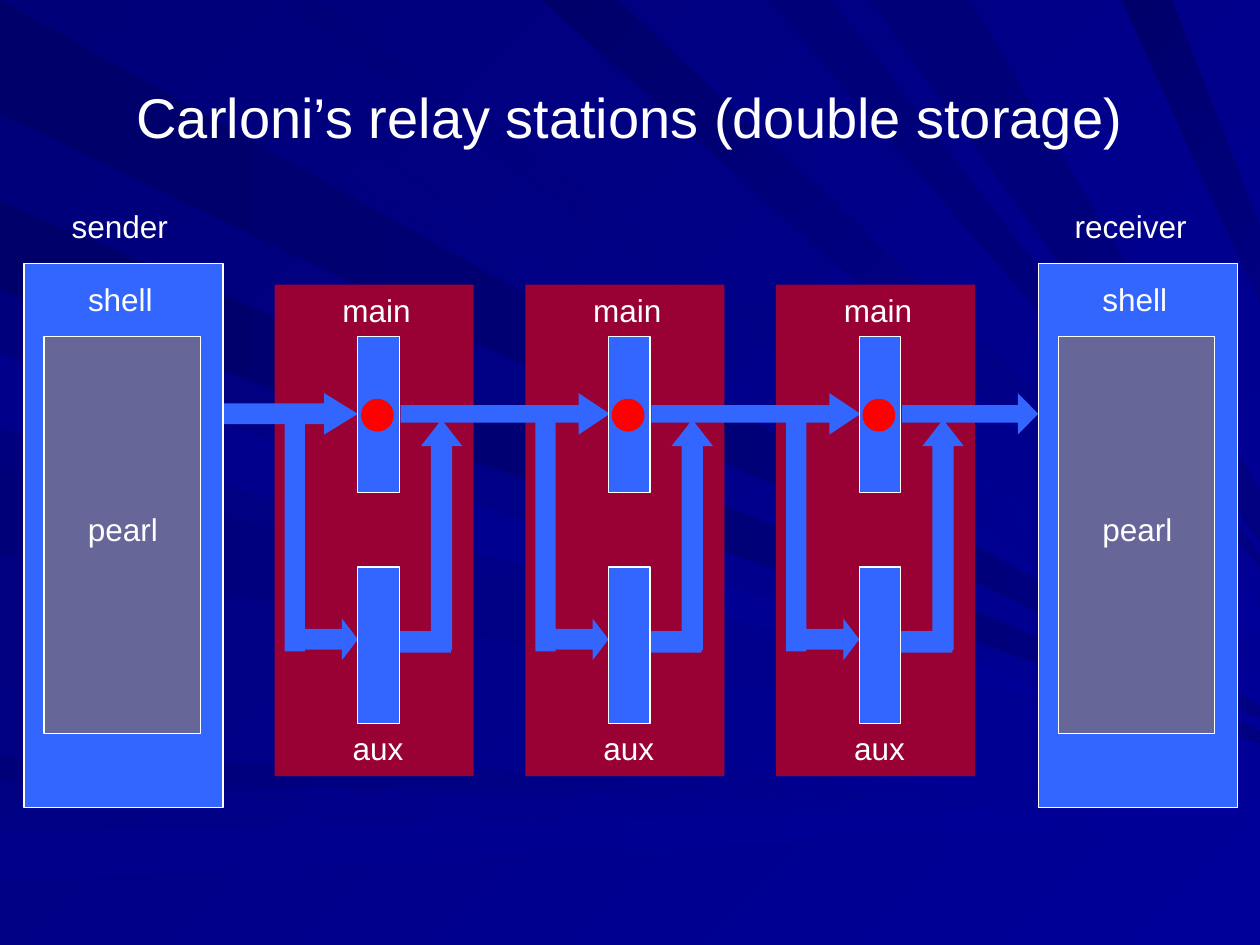
from pptx import Presentation
from pptx.util import Inches, Pt
from pptx.dml.color import RGBColor
from pptx.enum.shapes import MSO_SHAPE
from pptx.enum.text import MSO_ANCHOR, MSO_AUTO_SIZE, PP_ALIGN

HUE = {"white": "FFFFFF", "blue": "3366FF", "gray": "666699", "wine": "990033",
       "red": "FF0000", "night": "00006B", "dark": "000078", "deep": "000080",
       "royal": "00008A", "navy": "000099"}
RECT, ARROW, OVAL = MSO_SHAPE.RECTANGLE, MSO_SHAPE.RIGHT_ARROW, MSO_SHAPE.OVAL

deck = Presentation()
deck.slide_width, deck.slide_height = Inches(10), Inches(7.5)
slide = deck.slides.add_slide(deck.slide_layouts[5])
shapes = slide.shapes


def box(kind, left, top, wide, high, fill, line=None, adj=()):
    shape = shapes.add_shape(kind, Inches(left), Inches(top), Inches(wide), Inches(high))
    shape.shadow.inherit = False
    shape.fill.solid()
    shape.fill.fore_color.rgb = RGBColor.from_string(HUE[fill])
    if line:
        shape.line.color.rgb = RGBColor.from_string(HUE[line])
        shape.line.width = Pt(0.75)
    else:
        shape.line.fill.background()
    for i, value in enumerate(adj):
        shape.adjustments[i] = value


def label(text, left, top, wide):
    frame = shapes.add_textbox(Inches(left), Inches(top), Inches(wide), Inches(0.4)).text_frame
    frame.word_wrap = False
    frame.auto_size = MSO_AUTO_SIZE.SHAPE_TO_FIT_TEXT
    para = frame.paragraphs[0]
    para.text = text
    para.font.size, para.font.name = Pt(18), "Arial"
    para.font.color.rgb = RGBColor.from_string(HUE["white"])


# Background gradient
back = slide.background.fill
back.gradient()
back.gradient_angle = 315
for stop, hue in zip(back.gradient_stops, ("dark", "navy")):
    stop.color.rgb = RGBColor.from_string(HUE[hue])

# Light rays: each runs from a span of the left or top edge to one of the right edge
RAYS = [
    ("left", 0, 0.9, 5.6, 5.7, "night", "deep"),
    ("left", 1.6, 2.3, 5.8, 5.9, "night", "deep"),
    ("left", 6, 6.2, 6.3, 6.4, "dark", "navy"),
    ("left", 6.6, 7, 6.4, 6.5, "royal", "navy"),
    ("top", 0.3, 1, 5.6, 5.6, "dark", "navy"),
    ("top", 4.3, 4.9, 4.8, 5.1, "night", "navy"),
    ("top", 6.1, 6.6, 4.4, 4.5, "dark", "deep"),
    ("top", 8.9, 9.3, 1.8, 2.4, "night", "deep"),
    ("left", 2.8, 3.4, 6, 6, "royal", "navy"),
    ("left", 3.7, 4.4, 6, 6.1, "dark", "navy"),
    ("top", 2.2, 2.5, 5.4, 5.5, "dark", "navy"),
    ("top", 6.9, 7.7, 3.9, 4.3, "dark", "deep"),
]
for edge, start, end, high, low, first, last in RAYS:
    if edge == "left":
        corners = [(0, end), (0, start), (10, high), (10, low)]
    else:
        corners = [(start, 0), (end, 0), (10, high), (10, low)]
    points = [(Inches(x), Inches(y)) for x, y in corners]
    pen = shapes.build_freeform(*points[0])
    pen.add_line_segments(points[1:], close=True)
    ray = pen.convert_to_shape()
    ray.shadow.inherit = False
    ray.line.fill.background()
    ray.fill.gradient()
    ray.fill.gradient_angle = 0 if edge == "left" else 315
    for stop, hue in zip(ray.fill.gradient_stops, (first, last)):
        stop.color.rgb = RGBColor.from_string(HUE[hue])

# Title, lifted above the rays
title = shapes.title
title.element.getparent().append(title.element)
title.left, title.top, title.width, title.height = map(Inches, (0.5, 0.3, 9, 1.25))
title.text_frame.vertical_anchor = MSO_ANCHOR.MIDDLE
head = title.text_frame.paragraphs[0]
head.text = "Carloni’s relay stations (double storage)"
head.alignment = PP_ALIGN.CENTER
head.font.size, head.font.name = Pt(32), "Arial"
head.font.color.rgb = RGBColor.from_string(HUE["white"])

# Relay station panels
STEP = 1.99
steps = [i * STEP for i in range(3)]
for dx in steps:
    box(RECT, 2.18 + dx, 2.26, 1.58, 3.9, "wine")

# Main path arrows
box(ARROW, 1.76, 3.12, 1.08, 0.33, "blue", adj=(0.5, 0.81))
for dx, wide, tip in zip(steps, (1.66, 1.66, 1.08), (0.75, 0.75, 0.49)):
    box(ARROW, 3.18 + dx, 3.12, wide, 0.33, "blue", adj=(0.42, tip))

# Sender and receiver
for name, left, shift, wide in [("sender", 0.19, 0.28, 0.97), ("receiver", 8.24, 0.19, 1.09)]:
    box(RECT, left, 2.09, 1.58, 4.32, "blue", "white")
    box(RECT, left + 0.16, 2.67, 1.24, 3.15, "gray", "white")
    label("shell", left + 0.41, 2.17, 0.72)
    label("pearl", left + 0.41, 4, 0.76)
    label(name, left + shift, 1.59, wide)

# Main and auxiliary storage of each station
for dx in steps:
    box(RECT, 2.84 + dx, 2.67, 0.33, 1.24, "blue", "white")
    box(OVAL, 2.87 + dx, 3.17, 0.25, 0.25, "red", "red")
    box(ARROW, 2.34 + dx, 4.91, 0.5, 0.33, "blue", adj=(0.5, 0.38))
    box(RECT, 2.26 + dx, 3.34, 0.16, 1.83, "blue")
    box(ARROW, 2.59 + dx, 4.08, 1.83, 0.33, "blue", adj=(0.51, 0.64))
    shapes[-1].rotation = 270
    box(RECT, 3.17 + dx, 5.01, 0.41, 0.17, "blue")
    box(RECT, 2.84 + dx, 4.5, 0.33, 1.24, "blue", "white")
    label("main", 2.62 + dx, 2.26, 0.74)
    label("aux", 2.7 + dx, 5.74, 0.6)

deck.save("out.pptx")
